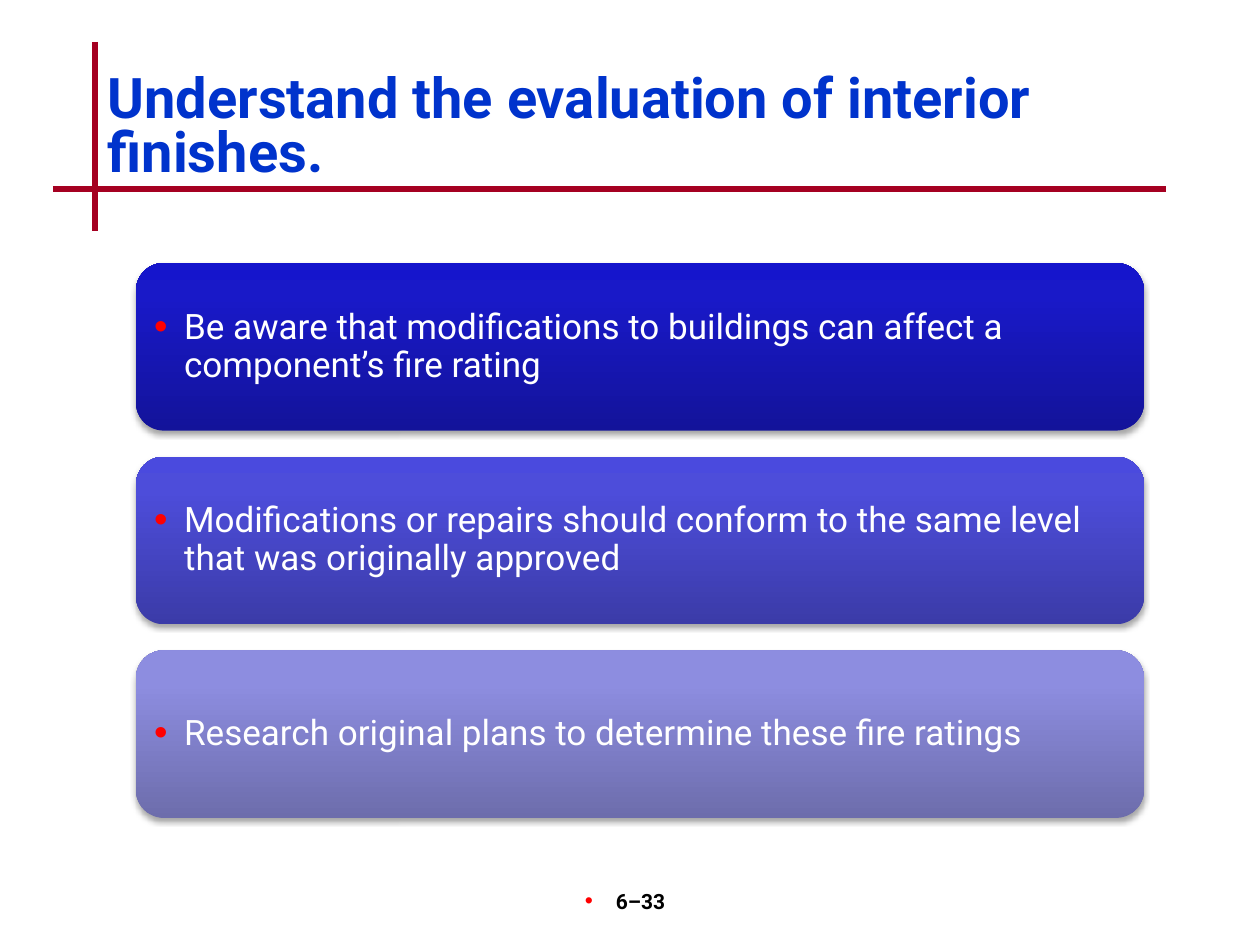
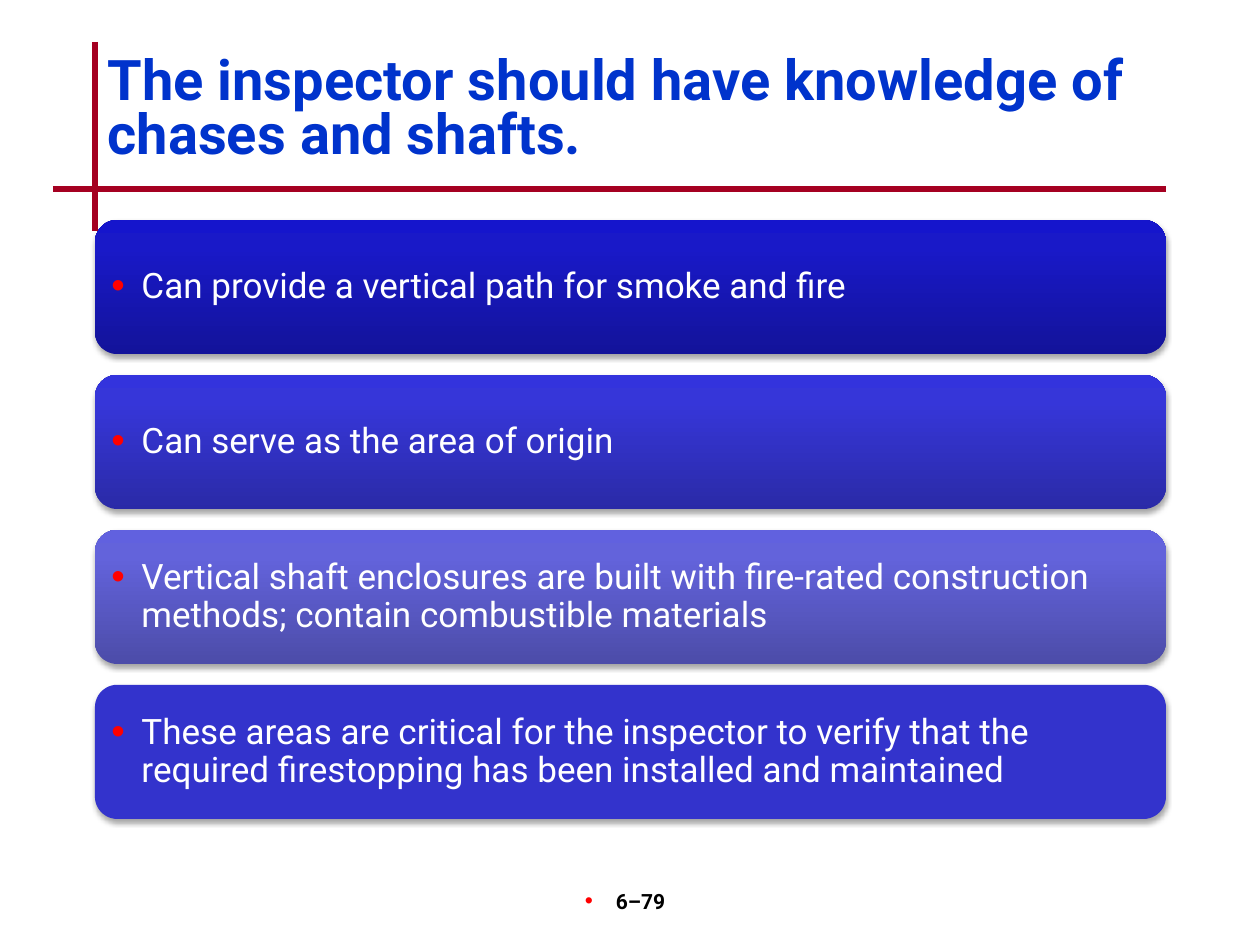
from lxml import etree
from pptx import Presentation
from pptx.dml.color import RGBColor
from pptx.enum.shapes import MSO_CONNECTOR, MSO_SHAPE
from pptx.enum.text import MSO_ANCHOR, MSO_AUTO_SIZE, PP_ALIGN
from pptx.oxml.ns import qn
from pptx.util import Emu, Pt

PX_PER_INCH = 126
FONT = "Roboto"
TITLE_BLUE = RGBColor(0x00, 0x33, 0xCC)
RULE_RED = RGBColor(0xA5, 0x00, 0x21)
BULLET_RED = RGBColor(0xFF, 0x00, 0x00)
BLACK = RGBColor(0x00, 0x00, 0x00)
WHITE = RGBColor(0xFF, 0xFF, 0xFF)
PLAIN_BLUE = RGBColor(0x33, 0x33, 0xCC)

# Gradients run from the bottom of a card to its top.
STOPS = (0, 80, 100)
NAVY = [RGBColor(0x13, 0x13, 0x9A), RGBColor(0x19, 0x19, 0xC8), RGBColor(0x15, 0x15, 0xCC)]
ROYAL = [RGBColor(0x2A, 0x2A, 0xA7), RGBColor(0x36, 0x36, 0xD9), RGBColor(0x33, 0x33, 0xDD)]
INDIGO = [RGBColor(0x3B, 0x3B, 0xA8), RGBColor(0x4D, 0x4D, 0xDA), RGBColor(0x4A, 0x4A, 0xDE)]
VIOLET = [RGBColor(0x4C, 0x4C, 0xA9), RGBColor(0x63, 0x63, 0xDB), RGBColor(0x61, 0x61, 0xDF)]
LAVENDER = [RGBColor(0x6D, 0x6D, 0xAC), RGBColor(0x8D, 0x8D, 0xE0), RGBColor(0x8C, 0x8C, 0xE2)]

GAP_RATIO = 0.155  # gap between cards, as a share of card height


def px(n):
    return Emu(round(n * 914400 / PX_PER_INCH))


def add_xml(parent, tag, **attrs):
    child = etree.SubElement(parent, qn(tag))
    for name, value in attrs.items():
        child.set(name, str(value))
    return child


def set_font(p, size, color, bold=False):
    p.font.name = FONT
    p.font.size = Pt(size)
    p.font.bold = bold
    p.font.color.rgb = color


def add_bullet(p, indent):
    pPr = p._p.get_or_add_pPr()
    pPr.set("marL", str(px(indent)))
    pPr.set("indent", str(-px(indent)))
    color = add_xml(pPr, "a:buClr")
    add_xml(color, "a:srgbClr", val=BULLET_RED)
    add_xml(pPr, "a:buSzPct", val=110000)
    add_xml(pPr, "a:buFont", typeface="Arial")
    add_xml(pPr, "a:buChar", char="•")


def fill_gradient(s, colors):
    s.fill.gradient()
    s.fill.gradient_angle = 90
    stops = s._element.spPr.find(".//" + qn("a:gsLst"))
    for stop in list(stops):
        stops.remove(stop)
    for position, color in zip(STOPS, colors):
        stop = add_xml(stops, "a:gs", pos=position * 1000)
        add_xml(stop, "a:srgbClr", val=color)


def add_soft_shadow(s):
    s.shadow.inherit = False
    effects = s._element.spPr.find(qn("a:effectLst"))
    shadow = add_xml(effects, "a:outerShdw", blurRad=Pt(3.1), dist=Pt(1.8),
                     dir=90 * 60000, rotWithShape=0)
    color = add_xml(shadow, "a:srgbClr", val="000000")
    add_xml(color, "a:alpha", val=35000)


def add_cross(slide):
    for x1, y1, x2, y2 in ((95, 42, 95, 231), (53, 189, 1166, 189)):
        line = slide.shapes.add_connector(
            MSO_CONNECTOR.STRAIGHT, px(x1), px(y1), px(x2), px(y2))
        line.line.color.rgb = RULE_RED
        line.line.width = Pt(3)
        add_xml(line._element.spPr, "a:effectLst")


def set_title(slide, text, box, anchor):
    title = slide.shapes.title
    title.left, title.top, title.width, title.height = map(px, box)
    tf = title.text_frame
    tf.text = text
    tf.auto_size = MSO_AUTO_SIZE.NONE
    tf.vertical_anchor = anchor
    p = tf.paragraphs[0]
    p.alignment = PP_ALIGN.LEFT
    p.line_spacing = 0.8
    set_font(p, 32, TITLE_BLUE, bold=True)


def add_page_number(slide, text):
    tf = slide.shapes.add_textbox(px(494), px(882), px(262), px(63)).text_frame
    tf.word_wrap = True
    p = tf.paragraphs[0]
    p.text = text
    p.alignment = PP_ALIGN.CENTER
    add_bullet(p, 31)
    set_font(p, 12, BLACK, bold=True)


def add_card(slide, text, color, box):
    """Add a rounded bullet card; color is one colour or a list of stops."""
    s = slide.shapes.add_shape(MSO_SHAPE.ROUNDED_RECTANGLE, *map(px, box))
    if isinstance(color, list):
        fill_gradient(s, color)
    else:
        s.fill.solid()
        s.fill.fore_color.rgb = color
    s.line.fill.background()
    add_soft_shadow(s)
    tf = s.text_frame
    tf.word_wrap = True
    tf.vertical_anchor = MSO_ANCHOR.MIDDLE
    tf.margin_left = tf.margin_right = tf.margin_top = tf.margin_bottom = px(10)
    p = tf.paragraphs[0]
    p.text = text
    p.alignment = PP_ALIGN.LEFT
    p.line_spacing = 0.9
    add_bullet(p, 30)
    set_font(p, 20, WHITE)


def add_card_stack(slide, cards, box):
    left, top, width, height = box
    card_height = height / (len(cards) + (len(cards) - 1) * GAP_RATIO)
    pitch = card_height * (1 + GAP_RATIO)
    for i, (text, color) in enumerate(cards):
        add_card(slide, text, color, (left, top + i * pitch, width, card_height))


def add_card_slide(prs, title, title_box, title_anchor, cards, cards_box, page):
    slide = prs.slides.add_slide(prs.slide_layouts[5])
    add_cross(slide)
    add_page_number(slide, page)
    set_title(slide, title, title_box, title_anchor)
    add_card_stack(slide, cards, cards_box)


def main():
    prs = Presentation()
    prs.slide_width, prs.slide_height = px(1260), px(945)
    add_card_slide(
        prs, "Understand the evaluation of interior finishes.",
        (95, 69, 1071, 126), MSO_ANCHOR.TOP,
        [("Be aware that modifications to buildings can affect a component’s fire rating", NAVY),
         ("Modifications or repairs should conform to the same level that was "
          "originally approved", INDIGO),
         ("Research original plans to determine these fire ratings", LAVENDER)],
        (136, 263, 1008, 555), "6–33")
    add_card_slide(
        prs, "The inspector should have knowledge of chases and shafts.",
        (95, 38, 1071, 147), MSO_ANCHOR.MIDDLE,
        [("Can provide a vertical path for smoke and fire", NAVY),
         ("Can serve as the area of origin", ROYAL),
         ("Vertical shaft enclosures are built with fire-rated construction methods; "
          "contain combustible materials", VIOLET),
         ("These areas are critical for the inspector to verify that the required "
          "firestopping has been installed and maintained", PLAIN_BLUE)],
        (95, 220, 1071, 599), "6–79")
    prs.save("out.pptx")


if __name__ == "__main__":
    main()
